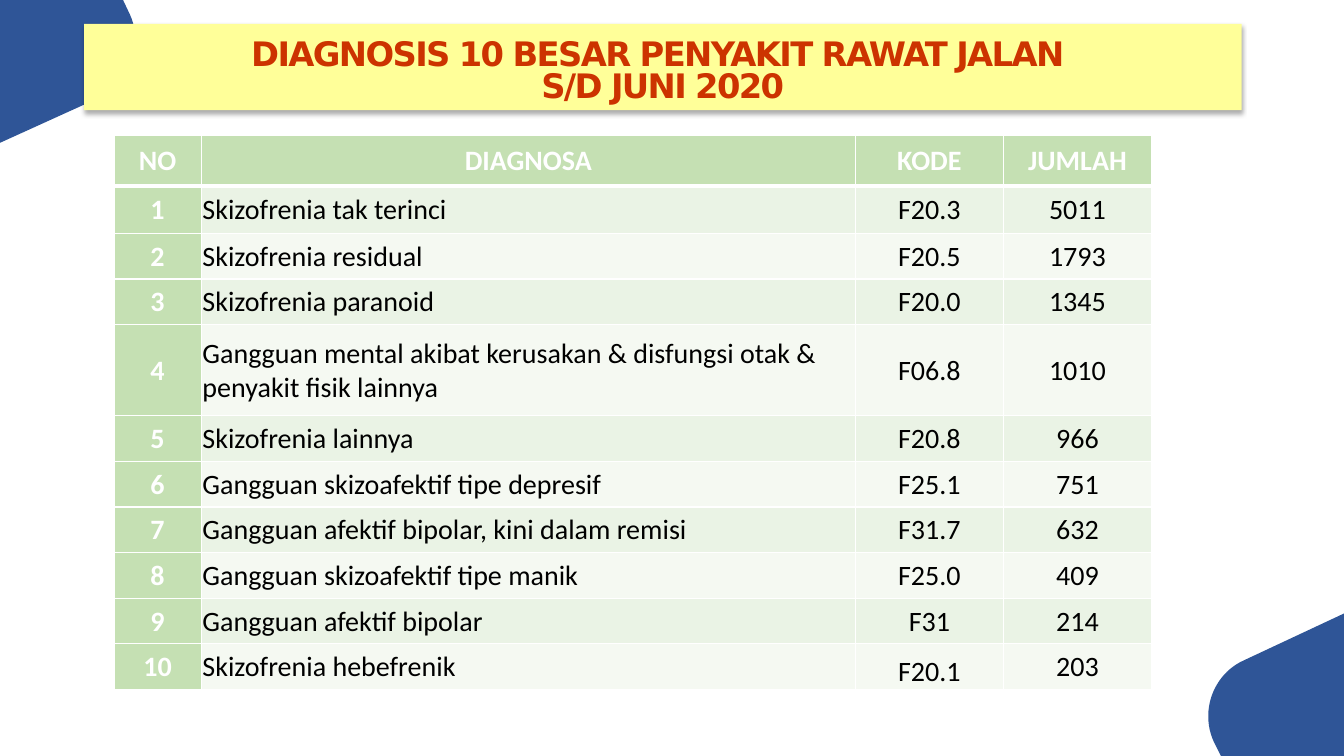
"""Build the slide listing the ten most common outpatient diagnoses."""
from dataclasses import dataclass

from lxml import etree
from pptx import Presentation
from pptx.dml.color import RGBColor
from pptx.enum.shapes import MSO_SHAPE
from pptx.enum.text import MSO_ANCHOR, PP_ALIGN
from pptx.oxml import parse_xml
from pptx.oxml.ns import qn
from pptx.util import Cm, Pt

TITLE = "DIAGNOSIS 10 BESAR PENYAKIT RAWAT JALAN \vS/D JUNI 2020"
HEADINGS = ("NO", "DIAGNOSA", "KODE", "JUMLAH")
DIAGNOSES = [
    ("Skizofrenia tak terinci", "F20.3", 5011),
    ("Skizofrenia residual", "F20.5", 1793),
    ("Skizofrenia paranoid", "F20.0", 1345),
    ("Gangguan mental akibat kerusakan & disfungsi otak & penyakit fisik lainnya",
     "F06.8", 1010),
    ("Skizofrenia lainnya", "F20.8", 966),
    ("Gangguan skizoafektif tipe depresif", "F25.1", 751),
    ("Gangguan afektif bipolar, kini dalam remisi", "F31.7", 632),
    ("Gangguan skizoafektif tipe manik", "F25.0", 409),
    ("Gangguan afektif bipolar", "F31", 214),
    ("Skizofrenia hebefrenik", "F20.1", 203),
]
COLUMN_WIDTHS = (2.2, 16.48, 3.73, 3.73)
HEADER_HEIGHT, FIRST_HEIGHT, ROW_HEIGHT = 1.26, 1.2, 1.15
TWO_LINE_ROW = 4

# Each corner: straight points before the curve, its four Bézier points, then the rest.
CORNERS = [
    ([(0, 0), (3.1, 0)],
     [(3.28, 0.38), (3.63, 1.17), (3.28, 2.11), (2.51, 2.46)],
     [(0, 3.6)]),
    ([(33.86, 19.05), (30.76, 19.05)],
     [(30.58, 18.69), (30.23, 17.93), (30.56, 16.99), (31.34, 16.64)],
     [(33.86, 15.46)]),
]
CURVE_STEPS = 24


@dataclass(frozen=True)
class Theme:
    corner: str = "2F5597"
    banner: str = "FFFF99"
    title: str = "CC3300"
    heading: str = "C5E0B3"
    bands: tuple = ("EAF3E5", "F5F9F2")
    light: str = "FFFFFF"
    dark: str = "000000"
    title_font: str = "DejaVu Sans"
    body_font: str = "Calibri"
    title_size: float = 24.1
    body_size: float = 20


THEME = Theme()
CENTER, LEFT = PP_ALIGN.CENTER, PP_ALIGN.LEFT
MIDDLE, BOTTOM = MSO_ANCHOR.MIDDLE, MSO_ANCHOR.BOTTOM
RECTANGLE = MSO_SHAPE.RECTANGLE
DRAWING_NS = "http://schemas.openxmlformats.org/drawingml/2006/main"


def paint(fill, color):
    fill.solid()
    fill.fore_color.rgb = RGBColor.from_string(color)


def set_font(font, name, size, color, bold):
    font.name, font.size, font.bold = name, Pt(size), bold
    font.color.rgb = RGBColor.from_string(color)


def curve_points(bezier):
    for step in range(CURVE_STEPS + 1):
        t = step / CURVE_STEPS
        weights = ((1 - t) ** 3, 3 * t * (1 - t) ** 2, 3 * t * t * (1 - t), t ** 3)
        yield tuple(sum(w * p[axis] for w, p in zip(weights, bezier)) for axis in (0, 1))


def add_corner(slide, before, bezier, after):
    outline = [(Cm(x), Cm(y)) for x, y in (*before, *curve_points(bezier), *after)]
    builder = slide.shapes.build_freeform(*outline[0])
    builder.add_line_segments(outline[1:], close=True)
    corner = builder.convert_to_shape()
    corner.shadow.inherit = False
    paint(corner.fill, THEME.corner)
    corner.line.fill.background()


def add_title(slide):
    banner = slide.shapes.add_shape(RECTANGLE, Cm(2.12), Cm(0.6), Cm(29.16), Cm(2.18))
    banner.shadow.inherit = False
    paint(banner.fill, THEME.banner)
    banner.line.fill.background()
    effects = banner._element.spPr.find(qn("a:effectLst"))
    effects.append(parse_xml(
        f'<a:outerShdw xmlns:a="{DRAWING_NS}" blurRad="44450" dist="27940" dir="5400000">'
        f'<a:srgbClr val="{THEME.dark}"><a:alpha val="32000"/></a:srgbClr></a:outerShdw>'))
    frame = banner.text_frame
    frame.word_wrap = True
    frame.vertical_anchor = BOTTOM
    heading = frame.paragraphs[0]
    heading.text = TITLE
    heading.alignment, heading.line_spacing = CENTER, 0.8
    set_font(heading.font, THEME.title_font, THEME.title_size, THEME.title, True)
    heading.font._element.set("spc", "-120")


def set_borders(cell, bottom_width):
    properties = cell._tc.get_or_add_tcPr()
    for side, width in (("lnL", 1), ("lnR", 1), ("lnT", 1), ("lnB", bottom_width)):
        border = etree.SubElement(properties, qn(f"a:{side}"), w=str(Pt(width)))
        solid = etree.SubElement(border, qn("a:solidFill"))
        etree.SubElement(solid, qn("a:srgbClr"), val=THEME.light)


def fill_cell(cell, value, row, column):
    emphasized = row == 0 or column == 0
    set_borders(cell, 3 if row == 0 else 1)
    paint(cell.fill, THEME.heading if emphasized else THEME.bands[(row - 1) % 2])
    cell.margin_left = cell.margin_right = cell.margin_top = Cm(0.03)
    cell.margin_bottom = 0
    last_code = row == len(DIAGNOSES) and column == HEADINGS.index("KODE")
    cell.vertical_anchor = BOTTOM if last_code else MIDDLE
    entry = cell.text_frame.paragraphs[0]
    entry.text = str(value)
    entry.alignment = LEFT if column == 1 and row else CENTER
    set_font(entry.font, THEME.body_font, THEME.body_size,
             THEME.light if emphasized else THEME.dark, emphasized)


def add_diagnoses(slide):
    rows = [HEADINGS, *((number, *entry) for number, entry in enumerate(DIAGNOSES, 1))]
    heights = [HEADER_HEIGHT, FIRST_HEIGHT] + [ROW_HEIGHT] * (len(rows) - 2)
    heights[TWO_LINE_ROW] *= 2
    table = slide.shapes.add_table(
        len(rows), len(HEADINGS), Cm(2.87), Cm(3.42),
        Cm(sum(COLUMN_WIDTHS)), Cm(sum(heights))).table
    for column, width in zip(table.columns, COLUMN_WIDTHS):
        column.width = Cm(width)
    for r, (values, height) in enumerate(zip(rows, heights)):
        table.rows[r].height = Cm(height)
        for c, value in enumerate(values):
            fill_cell(table.cell(r, c), value, r, c)


def main():
    presentation = Presentation()
    presentation.slide_width, presentation.slide_height = Cm(33.86), Cm(19.05)
    slide = presentation.slides.add_slide(presentation.slide_layouts[6])
    for corner in CORNERS:
        add_corner(slide, *corner)
    add_title(slide)
    add_diagnoses(slide)
    presentation.save("out.pptx")


if __name__ == "__main__":
    main()
